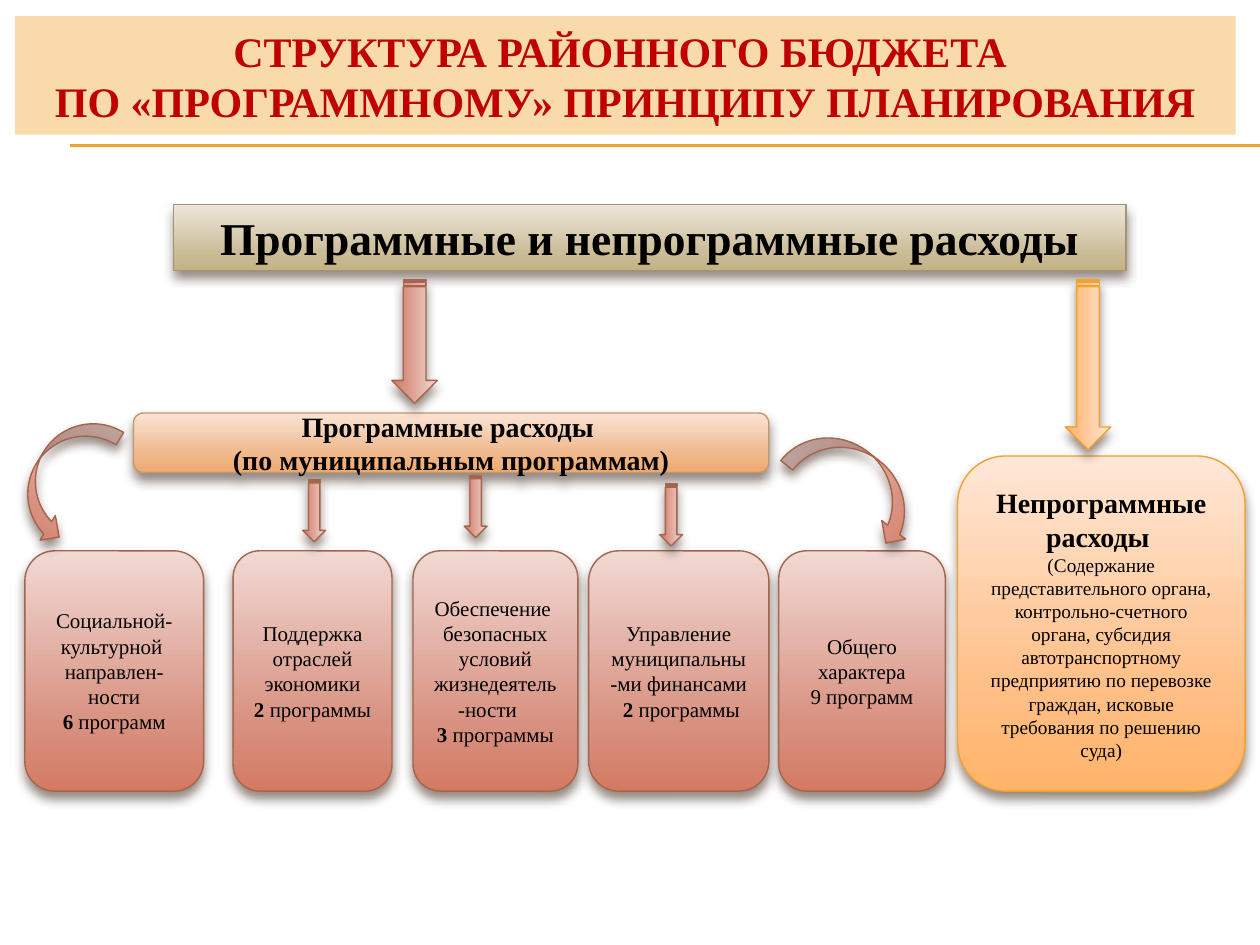
from copy import deepcopy

from lxml.etree import SubElement
from pptx import Presentation
from pptx.dml.color import RGBColor
from pptx.enum.shapes import MSO_CONNECTOR, MSO_SHAPE as SHAPE
from pptx.enum.text import MSO_ANCHOR, PP_ALIGN
from pptx.oxml.ns import qn
from pptx.util import Pt

rgb = RGBColor.from_string

# Gradient stops from top to bottom, then the outline colour
SAND = ("EDE8DC", "CCBD99", "C4B284", "A19574")
RED = ("F1D9D4", "D89180", "D47A62", "A5644E")
ORANGE = ("FFE7D7", "FFBE84", "FFB468", "F0A22E")
PEACH = ("FAE4D5", "EFB688", "EFAA6F", "C3986D")


def write(s, *paragraphs, size, color="000000", bold=False):
    """Each paragraph is a string or a list of (text, bold) runs."""
    tf = s.text_frame
    tf.word_wrap = True
    tf.vertical_anchor = MSO_ANCHOR.MIDDLE
    for i, runs in enumerate(paragraphs):
        p = tf.paragraphs[0] if i == 0 else tf.add_paragraph()
        p.alignment = PP_ALIGN.CENTER
        for text, strong in [(runs, bold)] if isinstance(runs, str) else runs:
            r = p.add_run()
            r.text = text
            r.font.name = "Times New Roman"
            r.font.size = Pt(size)
            r.font.bold = strong
            r.font.color.rgb = rgb(color)


def add_block(kind, left, top, width, height, theme, rotation=0):
    """Add a shape with a three-stop vertical gradient and a soft shadow."""
    s = slide.shapes.add_shape(kind, Pt(left), Pt(top), Pt(width), Pt(height))
    s.rotation = rotation
    s.fill.gradient()
    s.fill.gradient_angle = 270
    stops = s._element.spPr.find(qn("a:gradFill")).find(qn("a:gsLst"))
    stops.append(deepcopy(stops[-1]))
    for stop, position, color in zip(s.fill.gradient_stops, (0, 0.72, 1), theme):
        stop.position = position
        stop.color.rgb = rgb(color)
    s.line.color.rgb = rgb(theme[3])
    s.line.width = Pt(0.79)
    s.shadow.inherit = False
    shadow = SubElement(s._element.spPr.find(qn("a:effectLst")), qn("a:outerShdw"),
                        blurRad=str(Pt(6)), dist=str(Pt(4)), dir="5400000", rotWithShape="0")
    color = SubElement(shadow, qn("a:srgbClr"), val="4E3B30")
    SubElement(color, qn("a:alpha"), val="60000")
    return s


prs = Presentation()
prs.slide_width, prs.slide_height = Pt(720), Pt(540)
slide = prs.slides.add_slide(prs.slide_layouts[5])

# Double rule under the title
for y in (82.8, 83.5):
    rule = slide.shapes.add_connector(MSO_CONNECTOR.STRAIGHT, Pt(40.3), Pt(y), Pt(720), Pt(y))
    rule.line.color.rgb = rgb("F0A22E")
    rule.line.width = Pt(0.75)
    SubElement(rule._element.spPr, qn("a:effectLst"))

title = slide.shapes.title
title.left, title.top, title.width, title.height = Pt(8.6), Pt(9.2), Pt(697.5), Pt(67.8)
title.fill.solid()
title.fill.fore_color.rgb = rgb("F9DAAB")
write(title, "СТРУКТУРА РАЙОННОГО БЮДЖЕТА ", "ПО «ПРОГРАММНОМУ» ПРИНЦИПУ ПЛАНИРОВАНИЯ",
      size=24, color="C00000", bold=True)

# Total spending and its two branches
total = add_block(SHAPE.RECTANGLE, 99.2, 116.8, 544.3, 37.7, SAND)
write(total, "Программные и непрограммные расходы", size=26, bold=True)

other = add_block(SHAPE.ROUNDED_RECTANGLE, 547.2, 260.6, 164.3, 191.5, ORANGE)
write(other, [("Непрограммные расходы ", True)], size=16)
other.text_frame.add_paragraph()
details = other.text_frame.paragraphs[1]
details.alignment = PP_ALIGN.CENTER
r = details.add_run()
r.text = ("(Содержание представительного органа, контрольно-счетного органа, "
          "субсидия автотранспортному предприятию по перевозке граждан, "
          "исковые требования по решению суда)")
r.font.name, r.font.size, r.font.color.rgb = "Times New Roman", Pt(11), rgb("000000")

programs = add_block(SHAPE.ROUNDED_RECTANGLE, 76.3, 236, 363, 34, PEACH)
write(programs, "Программные расходы ", "(по муниципальным программам)", size=16, bold=True)

# Program groups: left, width, name, count line
groups = [
    (14.2, 102.2, "Социальной-культурной  направлен-ности", [("6", True), (" программ", False)]),
    (133.2, 90.8, "Поддержка отраслей экономики", [("2 ", True), ("программы", False)]),
    (236, 94.2, "Обеспечение  безопасных условий жизнедеятель-ности   ",
     [("3 ", True), ("программы", False)]),
    (336.4, 103, "Управление муниципальны-ми финансами ",
     [(" ", False), ("2", True), (" программы", False)]),
    (445, 95.2, "Общего характера", "9 программ"),
]
for left, width, name, count in groups:
    card = add_block(SHAPE.ROUNDED_RECTANGLE, left, 314.8, width, 137.3, RED)
    write(card, name, count, size=12)

# Downward arrows: centre x, top, length, thickness
arrows = [
    (236.9, 159.8, 70.6, 26, RED),
    (621.7, 159.8, 97.2, 26, ORANGE),
    (179.5, 274, 35.6, 13, RED),
    (271.8, 271.6, 35.6, 13, RED),
    (383.5, 276.4, 35.6, 13, RED),
]
for x, top, length, thick, theme in arrows:
    add_block(SHAPE.STRIPED_RIGHT_ARROW, x - length / 2, top + (length - thick) / 2,
              length, thick, theme, rotation=90)

# Curved arrows to the outer groups
add_block(SHAPE.CURVED_RIGHT_ARROW, 19.4, 232.6, 33.1, 78.5, RED, rotation=31.7)
add_block(SHAPE.CURVED_LEFT_ARROW, 473, 233.3, 34.6, 85, RED, rotation=308.1)

prs.save("out.pptx")
